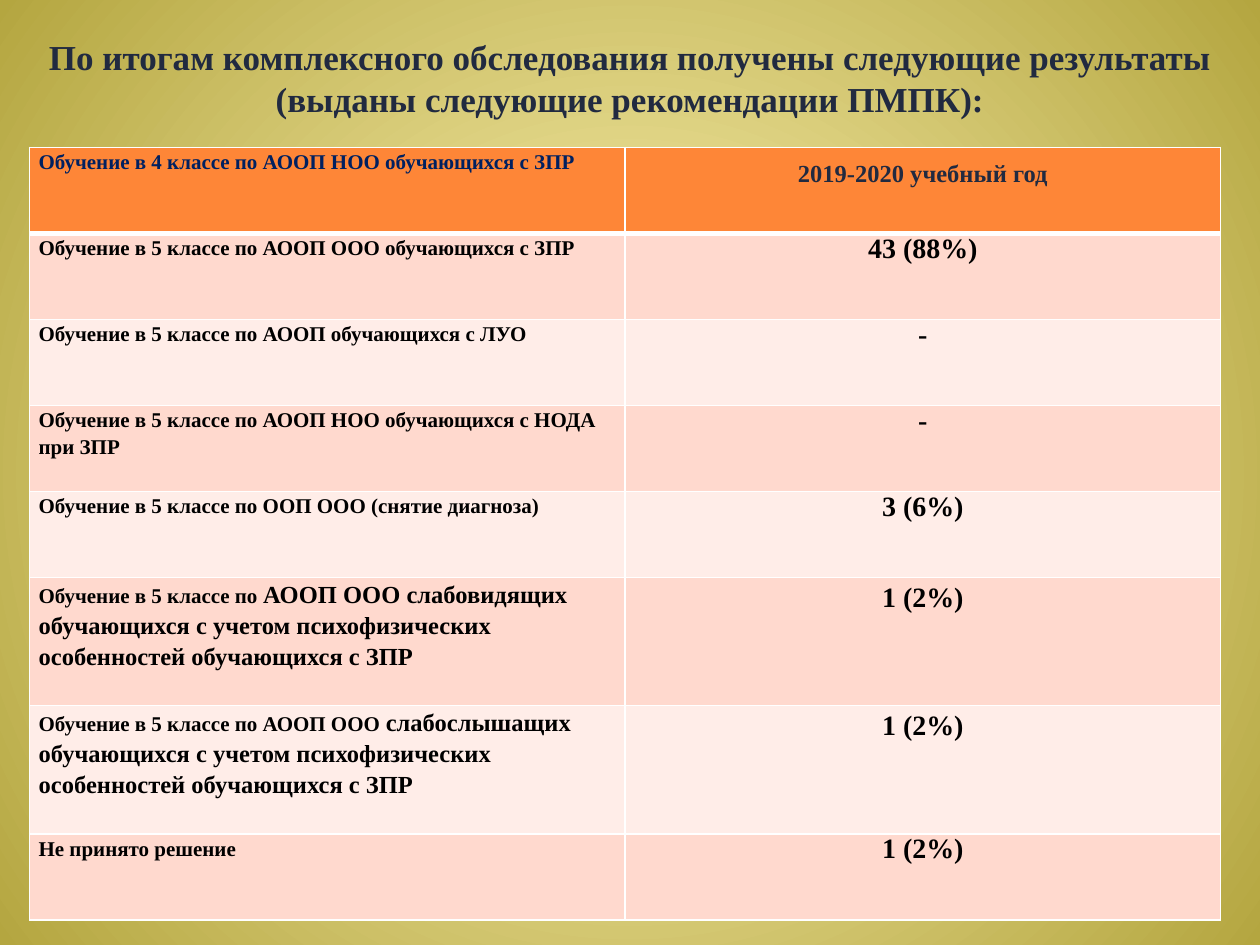
from lxml import etree
from pptx import Presentation
from pptx.dml.color import RGBColor
from pptx.enum.text import MSO_ANCHOR, PP_ALIGN
from pptx.oxml.ns import qn
from pptx.util import Pt

LEFT, CENTER = PP_ALIGN.LEFT, PP_ALIGN.CENTER
MIDDLE = MSO_ANCHOR.MIDDLE
NAVY, BLUE, BLACK, WHITE = "212A40", "002060", "000000", "FFFFFF"
ORANGE, BANDS = "FE8637", ("FFEDE8", "FFD9CE")


def rgb(value):
    return RGBColor.from_string(value)


def write(p, runs, color, align, spacing=1.0):
    """Fill a paragraph with (text, size) runs in bold."""
    p.alignment, p.line_spacing = align, spacing
    for text, size in runs:
        r = p.add_run()
        r.text = text
        r.font.color.rgb = rgb(color)
        font = {"name": "Times New Roman", "size": Pt(size), "bold": True}
        for key, value in font.items():
            setattr(r.font, key, value)


prs = Presentation()
prs.slide_width, prs.slide_height = Pt(720), Pt(540)
s = prs.slides.add_slide(prs.slide_layouts[6])

# Radial background
fill = s.background.fill
fill.gradient()
for stop, color in zip(fill.gradient_stops, ("FFF5B6", "B4A640")):
    stop.color.rgb = rgb(color)
lin = next(s.background._cSld.iter(qn("a:lin")))
circle = etree.Element(qn("a:path"), path="circle")
etree.SubElement(circle, qn("a:fillToRect"), {side: "50000" for side in "ltrb"})
lin.getparent().replace(lin, circle)

# Title
tf = s.shapes.add_textbox(0, Pt(16.8), Pt(720), Pt(55.4)).text_frame
tf.word_wrap, tf.vertical_anchor = True, MIDDLE
title = ("По итогам комплексного обследования получены следующие результаты",
         "(выданы следующие рекомендации ПМПК):")
for i, line in enumerate(title):
    p = tf.add_paragraph() if i else tf.paragraphs[0]
    write(p, [(line, 20)], NAVY, CENTER)

# Each row: label runs, result, line spacing of the result, height
SHORT, TALL = 49.2, 73.2
rows = [
    ([("Обучение в 4 классе по АООП НОО обучающихся с ЗПР", 12)],
     "2019-2020 учебный год", 1.5, SHORT),
    ([("Обучение в 5 классе по АООП ООО обучающихся с ЗПР", 12)], "43 (88%)", 1, SHORT),
    ([("Обучение в 5 классе по АООП обучающихся с ЛУО", 12)], "-", 1, SHORT),
    ([("Обучение в 5 классе по АООП НОО обучающихся с НОДА при ЗПР", 12)], "-", 1, SHORT),
    ([("Обучение в 5 классе по ООП ООО (снятие диагноза)", 12)], "3 (6%)", 1, SHORT),
    ([("Обучение в 5 классе по ", 12),
      ("АООП ООО слабовидящих обучающихся с учетом психофизических "
       "особенностей обучающихся с ЗПР", 14)], "1 (2%)", 1.15, TALL),
    ([("Обучение в 5 классе по АООП ООО ", 12),
      ("слабослышащих обучающихся с учетом психофизических "
       "особенностей обучающихся с ЗПР", 14)], "1 (2%)", 1.15, TALL),
    ([("Не принято решение", 12)], "1 (2%)", 1, SHORT),
]
height = sum(row[-1] for row in rows)
table = s.shapes.add_table(len(rows), 2, Pt(16.9), Pt(84.2), Pt(680.6), Pt(height)).table
for column in table.columns:
    column.width = Pt(340.3)

for i, (label, result, spacing, row_height) in enumerate(rows):
    table.rows[i].height = Pt(row_height)
    header = i == 0
    left, right = table.cell(i, 0), table.cell(i, 1)
    write(left.text_frame.paragraphs[0], label, BLUE if header else BLACK, LEFT, 1.15)
    write(right.text_frame.paragraphs[0], [(result, 14 if header else 16)],
          NAVY if header else BLACK, CENTER, spacing)
    for cell in (left, right):
        cell.margin_left = cell.margin_right = Pt(5.2)
        cell.margin_top = cell.margin_bottom = 0
        cell.fill.solid()
        cell.fill.fore_color.rgb = rgb(ORANGE if header else BANDS[i % 2])
        widths = {"L": 1, "R": 1, "T": 3 if i == 1 else 1, "B": 3 if header else 1}
        for n, (side, width) in enumerate(widths.items()):
            ln = etree.Element(qn(f"a:ln{side}"), w=str(Pt(width)))
            line_fill = etree.SubElement(ln, qn("a:solidFill"))
            etree.SubElement(line_fill, qn("a:srgbClr"), val=WHITE)
            cell._tc.tcPr.insert(n, ln)

prs.save("out.pptx")
